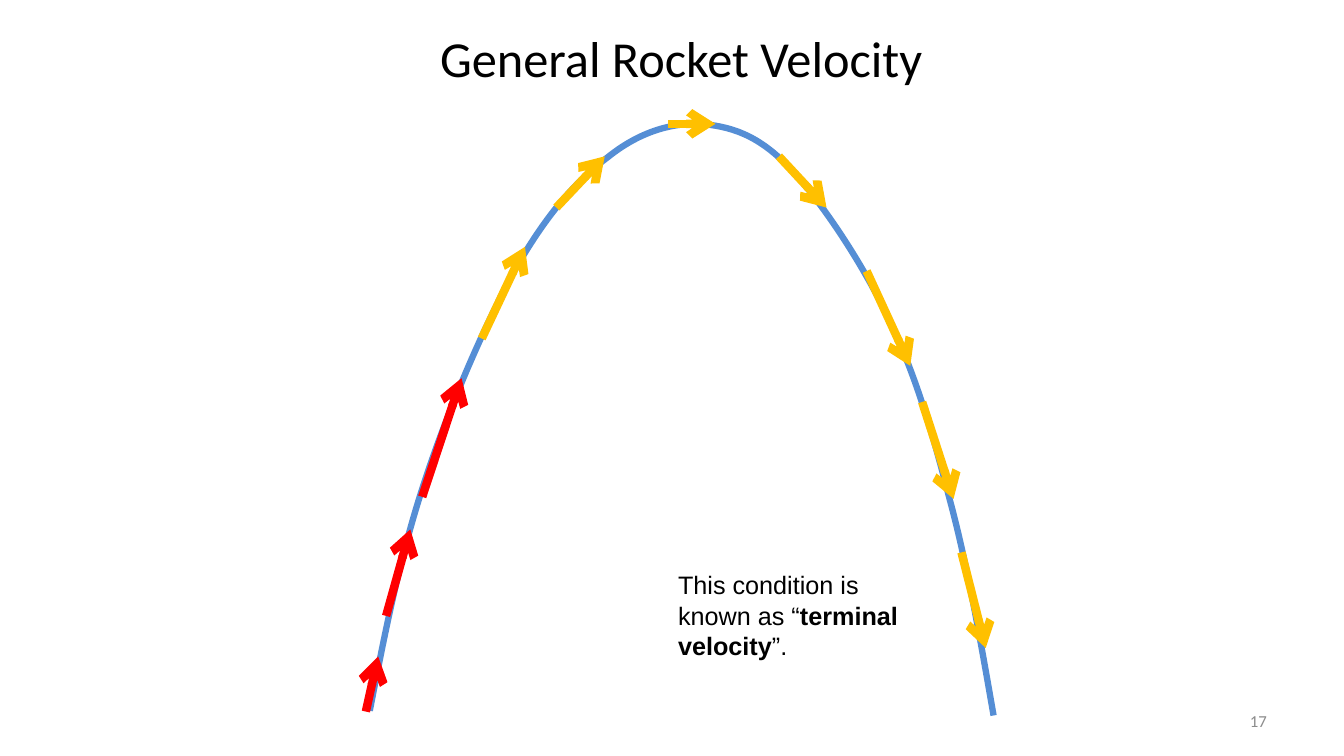
"""Build the slide on rocket velocity along its flight path."""
from dataclasses import dataclass

from lxml.etree import SubElement
from pptx import Presentation
from pptx.dml.color import RGBColor
from pptx.enum.shapes import MSO_CONNECTOR
from pptx.enum.text import MSO_ANCHOR as Anchor, MSO_AUTO_SIZE as AutoSize, PP_ALIGN as Align
from pptx.oxml.ns import qn
from pptx.util import Cm, Pt


@dataclass(frozen=True)
class Theme:
    path_blue: RGBColor = RGBColor.from_string("558ED5")
    thrust_red: RGBColor = RGBColor.from_string("FF0000")
    coast_gold: RGBColor = RGBColor.from_string("FFC000")
    ink: RGBColor = RGBColor.from_string("000000")
    muted: RGBColor = RGBColor.from_string("8C8C8C")
    heading_font: str = "Calibri"
    body_font: str = "Arial"
    title_size: Pt = Pt(36)
    note_size: Pt = Pt(18)
    number_size: Pt = Pt(12)
    path_width: Pt = Pt(4.5)
    arrow_width: Pt = Pt(6)


theme = Theme()
deck = Presentation()
deck.slide_width, deck.slide_height = Cm(33.87), Cm(19.05)
slide = deck.slides.add_slide(deck.slide_layouts[6])


def add_text(runs, box, *, font, size, color=theme.ink, align=Align.LEFT,
             anchor=Anchor.TOP, fit=AutoSize.NONE):
    frame = slide.shapes.add_textbox(*map(Cm, box)).text_frame
    frame.word_wrap = True
    frame.auto_size = fit
    frame.vertical_anchor = anchor
    paragraph = frame.paragraphs[0]
    paragraph.alignment = align
    for words, bold in runs:
        run = paragraph.add_run()
        run.text = words
        run.font.name, run.font.size, run.font.bold = font, size, bold
        run.font.color.rgb = color


launch = (9.32, 17.91)
path_curves = [
    ((9.7, 15.95), (10.08, 14.02), (10.69, 12.17)),
    ((11.3, 10.29), (12.24, 8.13), (13, 6.76)),
    ((13.79, 5.38), (14.53, 4.55), (15.32, 3.96)),
    ((16.08, 3.35), (16.87, 3.1), (17.63, 3.12)),
    ((18.39, 3.18), (19.08, 3.38), (19.86, 4.19)),
    ((20.65, 5), (21.72, 6.6), (22.38, 8)),
    ((23.06, 9.4), (23.5, 10.9), (23.93, 12.57)),
    ((24.38, 14.22), (24.74, 16.31), (25.04, 18.03)),
]
outline = slide.shapes.build_freeform(*map(Cm, launch))
outline.add_line_segments(
    [tuple(map(Cm, point)) for curve in path_curves for point in curve], close=False
)
flight_path = outline.convert_to_shape()
flight_path.shadow.inherit = False
flight_path.fill.background()
flight_path.line.color.rgb = theme.path_blue
flight_path.line.width = theme.path_width

segments = list(flight_path._element.iter(qn("a:lnTo")))
for first in range(0, len(segments), 3):
    bend = SubElement(segments[first].getparent(), qn("a:cubicBezTo"))
    for segment in segments[first:first + 3]:
        bend.append(segment[0])
        segment.getparent().remove(segment)

velocities = {
    theme.thrust_red: [
        (9.22, 17.93, 9.53, 16.54),
        (9.73, 15.52, 10.34, 13.34),
        (10.64, 12.52, 11.63, 9.53),
    ],
    theme.coast_gold: [
        (12.14, 8.53, 13.23, 6.22),
        (14.02, 5.23, 15.24, 3.94),
        (16.84, 3.12, 18.03, 3.12),
        (19.63, 3.94, 20.83, 5.23),
        (21.84, 6.83, 22.94, 9.22),
        (23.24, 10.13, 24.03, 12.57),
        (24.23, 13.92, 24.84, 16.33),
    ],
}
for color, arrows in velocities.items():
    for ends in arrows:
        velocity = slide.shapes.add_connector(MSO_CONNECTOR.STRAIGHT, *map(Cm, ends))
        velocity.line.color.rgb = color
        velocity.line.width = theme.arrow_width
        properties = velocity._element.spPr
        SubElement(properties.find(qn("a:ln")), qn("a:tailEnd"), type="arrow")
        SubElement(properties, qn("a:effectLst"))

add_text(
    [("This condition is known as “", False), ("terminal velocity", True), ("”.", False)],
    (16.84, 14.23, 7.01, 2.57), font=theme.body_font, size=theme.note_size,
    fit=AutoSize.SHAPE_TO_FIT_TEXT,
)
add_text(
    [("General Rocket Velocity", False)], (5.74, 0.41, 22.86, 2.06),
    font=theme.heading_font, size=theme.title_size, align=Align.CENTER, anchor=Anchor.MIDDLE,
)
add_text(
    [("17", False)], (24.28, 17.65, 7.9, 1.02), font=theme.heading_font,
    size=theme.number_size, color=theme.muted, align=Align.RIGHT, anchor=Anchor.MIDDLE,
)

deck.save("out.pptx")
